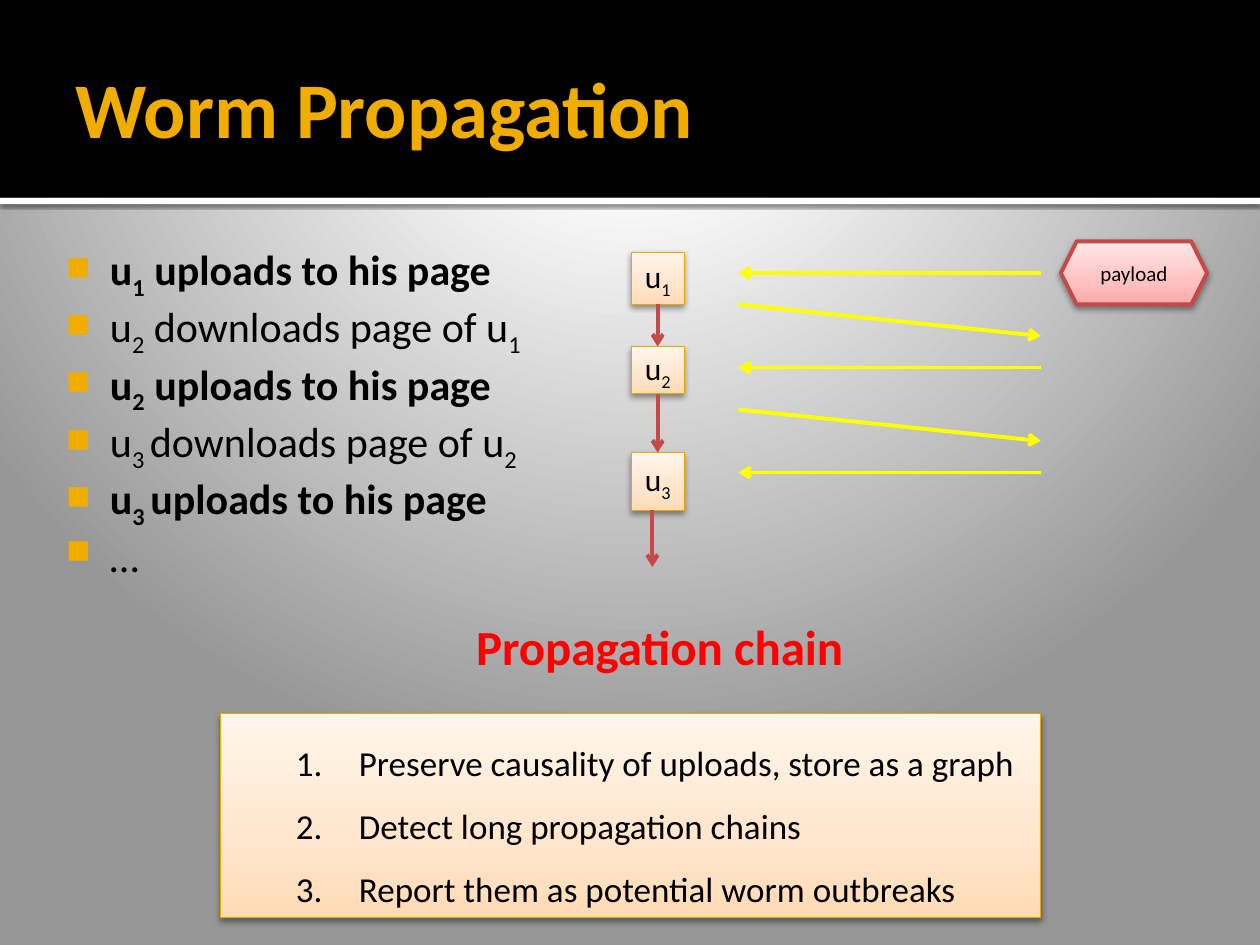
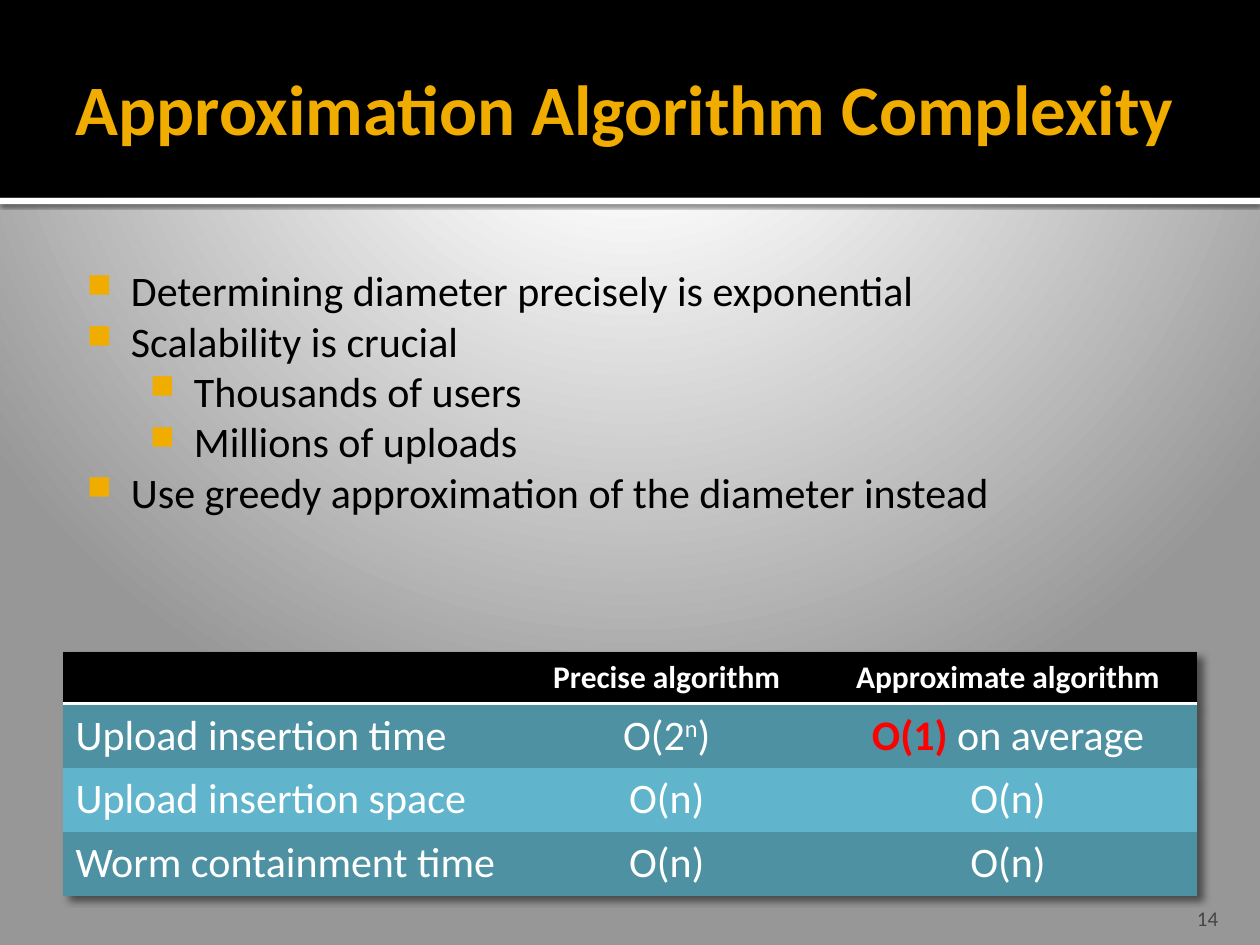
from dataclasses import dataclass

from pptx import Presentation
from pptx.dml.color import RGBColor
from pptx.enum.shapes import MSO_CONNECTOR, MSO_SHAPE
from pptx.enum.text import MSO_ANCHOR, MSO_AUTO_SIZE, PP_ALIGN
from pptx.oxml import parse_xml
from pptx.oxml.ns import nsdecls, qn
from pptx.util import Inches, Pt

RECTANGLE, HEXAGON = MSO_SHAPE.RECTANGLE, MSO_SHAPE.HEXAGON
STRAIGHT = MSO_CONNECTOR.STRAIGHT
TOP, MIDDLE, BOTTOM = MSO_ANCHOR.TOP, MSO_ANCHOR.MIDDLE, MSO_ANCHOR.BOTTOM
LEFT, CENTER, RIGHT = PP_ALIGN.LEFT, PP_ALIGN.CENTER, PP_ALIGN.RIGHT
FIXED = MSO_AUTO_SIZE.NONE

COLUMNS, ROWS = 120, 90
CELL = Inches(10) / COLUMNS
TITLE_ONLY = 5
PLAIN_TABLE = "{2D5ABB26-0587-4C30-8999-92F81FD0307C}"


@dataclass(frozen=True)
class Theme:
    font: str = "Calibri"
    black: str = "000000"
    white: str = "FFFFFF"
    gold: str = "F0AD00"
    gold_line: str = "EBA900"
    red: str = "FF0000"
    brick: str = "C64847"
    yellow: str = "FFFF00"
    gray: str = "454545"
    row_dark: str = "4D91A3"
    row_light: str = "60B5CC"
    backdrop: tuple = ((0, "FFFFFF"), (20, "FFFFFF"), (100, "979797"))
    peach: tuple = ((0, "FFDBB5"), (35, "FFE5CB"), (100, "FFF5EB"))
    pink: tuple = ((0, "FFA7A7"), (35, "FFC1C0"), (100, "FFE7E7"))
    title: float = 45
    long_title: float = 40.5
    caption: float = 28
    body: float = 24
    step: float = 20
    label: float = 18
    small: float = 12


THEME = Theme()


@dataclass(frozen=True)
class Box:
    """A region in grid columns and rows."""
    col: float
    row: float
    width: float
    height: float

    def inner(self, col, row, width, height):
        return Box(self.col + col, self.row + row, width, height)

    def emu(self):
        return [round(n * CELL) for n in (self.col, self.row, self.width, self.height)]


def apply(target, **values):
    for key, value in values.items():
        setattr(target, key, value)


def set_margins(frame, left, top, right, bottom):
    apply(frame, margin_left=Inches(left), margin_top=Inches(top),
          margin_right=Inches(right), margin_bottom=Inches(bottom))


def gradient(stops, direction):
    marks = "".join(f'<a:gs pos="{pos * 1000}"><a:srgbClr val="{color}"/></a:gs>'
                    for pos, color in stops)
    return parse_xml(f'<a:gradFill {nsdecls("a")} rotWithShape="1">'
                     f'<a:gsLst>{marks}</a:gsLst>{direction}</a:gradFill>')


def shadow(alpha, blur, distance, angle):
    return parse_xml(
        f'<a:effectLst {nsdecls("a")}><a:outerShdw blurRad="{Pt(blur)}" dist="{Pt(distance)}" '
        f'dir="{angle * 60000}" rotWithShape="0"><a:srgbClr val="{THEME.black}">'
        f'<a:alpha val="{alpha * 1000}"/></a:srgbClr></a:outerShdw></a:effectLst>')


def write(paragraph, text, size, color=THEME.black, bold=False, base=-25):
    """Add runs; every second piece between bars is shifted off the baseline."""
    for index, piece in enumerate(text.split("|")):
        if not piece:
            continue
        run = paragraph.add_run()
        run.text = piece
        apply(run.font, name=THEME.font, size=Pt(size), bold=bold)
        run.font.color.rgb = RGBColor.from_string(color)
        if index % 2:
            run.font._element.set("baseline", str(base * 1000))


def hang(paragraph, margin, indent, *marks):
    """Give a paragraph a hanging indent and the bullet elements in marks."""
    props = paragraph._p.get_or_add_pPr()
    props.set("marL", str(Inches(margin)))
    props.set("indent", str(Inches(-indent)))
    for mark in marks:
        props.append(parse_xml(mark.replace(" ", f" {nsdecls('a')} ", 1)))


def next_paragraph(frame, index):
    return frame.add_paragraph() if index else frame.paragraphs[0]


def add_block(slide, box, fill, outline=None, kind=RECTANGLE, effect=None):
    """Add a preset shape; fill is one colour or a tuple of gradient stops."""
    block = slide.shapes.add_shape(kind, *box.emu())
    block.shadow.inherit = False
    block.fill.solid()
    props = block.element.spPr
    if isinstance(fill, str):
        block.fill.fore_color.rgb = RGBColor.from_string(fill)
    else:
        props.replace(props.find(qn("a:solidFill")),
                      gradient(fill, '<a:lin ang="16200000" scaled="0"/>'))
    if outline:
        color, width = outline
        block.line.color.rgb = RGBColor.from_string(color)
        block.line.width = Pt(width)
    else:
        block.line.fill.background()
    if effect:
        props.replace(props.find(qn("a:effectLst")), shadow(*effect))
    return block


def add_card(slide, box, fill=THEME.peach, outline=(THEME.gold_line, 0.5), kind=RECTANGLE):
    return add_block(slide, box, fill, outline, kind, (38, 3.5, 2, 90))


def add_label(card, text, size):
    apply(card.text_frame, word_wrap=False, vertical_anchor=MIDDLE)
    paragraph = card.text_frame.paragraphs[0]
    paragraph.alignment = CENTER
    write(paragraph, text, size)


def add_arrow(slide, box, color):
    """Draw an arrow across the box; negative sizes point left or up."""
    x, y, dx, dy = box.emu()
    arrow = slide.shapes.add_connector(STRAIGHT, x, y, x + dx, y + dy)
    arrow.line.color.rgb = RGBColor.from_string(color)
    arrow.line.width = Pt(2.25)
    props = arrow.element.spPr
    props.find(qn("a:ln")).append(parse_xml(f'<a:tailEnd {nsdecls("a")} type="arrow"/>'))
    props.append(parse_xml(f'<a:effectLst {nsdecls("a")}/>'))


def add_text(slide, box, text, size, color, align=LEFT, bold=False, wrap=True):
    frame = slide.shapes.add_textbox(*box.emu()).text_frame
    frame.word_wrap = wrap
    frame.paragraphs[0].alignment = align
    write(frame.paragraphs[0], text, size, color, bold)
    return frame


def add_bullets(slide, box, items):
    """Add (level, text, bold) items as a list with square bullets."""
    frame = slide.shapes.add_textbox(*box.emu()).text_frame
    frame.word_wrap = True
    set_margins(frame, 0.06, 0.1, 0.1, 0.05)
    for index, (level, text, bold) in enumerate(items):
        paragraph = next_paragraph(frame, index)
        paragraph.level = level
        hang(paragraph, 0.48 + level / 2, 0.35,
             f'<a:buClr ><a:srgbClr val="{THEME.gold}"/></a:buClr>',
             '<a:buSzPct val="80000"/>', '<a:buChar char="■"/>')
        write(paragraph, text, THEME.body, bold=bold)


def new_slide(deck, heading, size):
    """Start a slide with the black band, the white rule and the title."""
    slide = deck.slides.add_slide(deck.slide_layouts[TITLE_ONLY])
    title = slide.shapes.title
    rule = add_block(slide, Box(0, 18.84, COLUMNS, 0.6), THEME.white, effect=(60, 2.5, 0.8, 90))
    band = add_block(slide, Box(0, 0, COLUMNS, 18.84), THEME.black)
    for strip in (rule, band):
        title.element.addprevious(strip.element)
    left, top, width, height = Box(6, 2, 108, 16.44).emu()
    apply(title, left=left, top=top, width=width, height=height)
    frame = title.text_frame
    apply(frame, vertical_anchor=MIDDLE, word_wrap=True, auto_size=FIXED)
    set_margins(frame, 0.1, 0.05, 0.05, 0.05)
    frame.paragraphs[0].alignment = LEFT
    write(frame.paragraphs[0], heading, size, THEME.gold, bold=True)
    return slide


def add_chain(slide, box):
    """Users linked downwards, with their uploads and downloads beside them."""
    node_width = 5.04
    spans = [(0, 5), (9, 4.5), (19.1, 5.5)]
    for number, (row, height) in enumerate(spans, 1):
        add_label(add_card(slide, box.inner(0, row, node_width, height)), f"u|{number}", THEME.label)

    targets = [row for row, _ in spans[1:]] + [box.height]
    for (row, height), target in zip(spans, targets):
        shift = -0.5 if target == box.height else 0
        start = row + height
        add_arrow(slide, box.inner(node_width / 2 + shift, start, 0, target - start), THEME.brick)

    near, reach = 10.2, box.width - 10.2
    for row in (2, 11, 21):
        add_arrow(slide, box.inner(box.width, row, -reach, 0), THEME.yellow)
    for row in (5, 15):
        add_arrow(slide, box.inner(near, row, reach, 3), THEME.yellow)


def add_steps(slide, box, steps):
    frame = add_card(slide, box).text_frame
    apply(frame, word_wrap=True, vertical_anchor=TOP)
    for index, step in enumerate(steps):
        paragraph = next_paragraph(frame, index)
        apply(paragraph, level=1, alignment=LEFT, line_spacing=1.5)
        hang(paragraph, 1, 0.5, '<a:buFont typeface="+mj-lt"/>',
             '<a:buAutoNum type="arabicPeriod"/>')
        write(paragraph, step, THEME.step)


def add_complexity_table(slide, box, rows):
    table = slide.shapes.add_table(len(rows), len(rows[0]), *box.emu()).table
    props = table._tbl.tblPr
    props.find(qn("a:tableStyleId")).text = PLAIN_TABLE
    props.insert(0, shadow(50, 4, 4, 45))
    for column, width in zip(table.columns, (43, 29, 36)):
        column.width = round(width * CELL)
    for index, row in enumerate(rows):
        header = index == 0
        table.rows[index].height = Inches(0.41 if header else 0.5)
        fill = THEME.black if header else (THEME.row_light, THEME.row_dark)[index % 2]
        for position, text in enumerate(row):
            cell = table.cell(index, position)
            cell.fill.solid()
            cell.fill.fore_color.rgb = RGBColor.from_string(fill)
            paragraph = cell.text_frame.paragraphs[0]
            paragraph.alignment = CENTER if position else LEFT
            size = THEME.label if header else THEME.body
            if header:
                cell._tc.get_or_add_tcPr().insert(0, parse_xml(
                    f'<a:lnB {nsdecls("a")} w="{Pt(2)}"><a:solidFill>'
                    f'<a:srgbClr val="{THEME.white}"/></a:solidFill></a:lnB>'))
            best = "O(1)"
            if text.startswith(best):
                write(paragraph, best, size, THEME.red, bold=True)
                text = text[len(best):]
            write(paragraph, text, size, THEME.white, bold=header, base=30)


def build_propagation(deck):
    slide = new_slide(deck, "Worm Propagation", THEME.title)
    add_bullets(slide, Box(4, 22, 59, 60.7), [
        (0, "u|1| uploads to his page", True),
        (0, "u|2| downloads page of u|1", False),
        (0, "u|2| uploads to his page", True),
        (0, "u|3 |downloads page of u|2", False),
        (0, "u|3 |uploads to his page", True),
        (0, "…", False),
    ])
    add_chain(slide, Box(60.12, 24, 39, 30))
    add_text(slide, Box(44.16, 58.08, 37.8, 6.84), "Propagation chain",
             THEME.caption, THEME.red, bold=True, wrap=False)
    payload = add_card(slide, Box(101.04, 23, 13.92, 6), THEME.pink, (THEME.brick, 2.25), HEXAGON)
    add_label(payload, "payload", THEME.small)
    add_steps(slide, Box(21, 68, 78.1, 19.4), [
        "Preserve causality of uploads, store as a graph",
        "Detect long propagation chains",
        "Report them as potential worm outbreaks",
    ])


def build_complexity(deck):
    slide = new_slide(deck, "Approximation Algorithm Complexity", THEME.long_title)
    add_complexity_table(slide, Box(6, 62.12, 108, 22.92), [
        ("", "Precise algorithm", "Approximate algorithm"),
        ("Upload insertion time", "O(2|n|)", "O(1) on average"),
        ("Upload insertion space", "O(n)", "O(n)"),
        ("Worm containment time", "O(n)", "O(n)"),
    ])
    number = add_text(slide, Box(107.6, 85, 9.6, 3.6), "14", THEME.small, THEME.gray, RIGHT)
    set_margins(number, 0.1, 0.05, 0.1, 0)
    number.vertical_anchor = BOTTOM
    add_bullets(slide, Box(6, 24, 108, 32), [
        (0, "Determining diameter precisely is exponential", False),
        (0, "Scalability is crucial", False),
        (1, "Thousands of users", False),
        (1, "Millions of uploads", False),
        (0, "Use greedy approximation of the diameter instead", False),
    ])


def set_backdrop(master):
    master.background.fill.solid()
    props = master.element.find(".//" + qn("p:bgPr"))
    props.replace(props.find(qn("a:solidFill")), gradient(
        THEME.backdrop, '<a:path path="circle"><a:fillToRect l="10000" t="-25000" '
                        'r="10000" b="125000"/></a:path>'))


def main():
    deck = Presentation()
    apply(deck, slide_width=round(COLUMNS * CELL), slide_height=round(ROWS * CELL))
    set_backdrop(deck.slide_master)
    build_propagation(deck)
    build_complexity(deck)
    deck.save("out.pptx")


if __name__ == "__main__":
    main()
